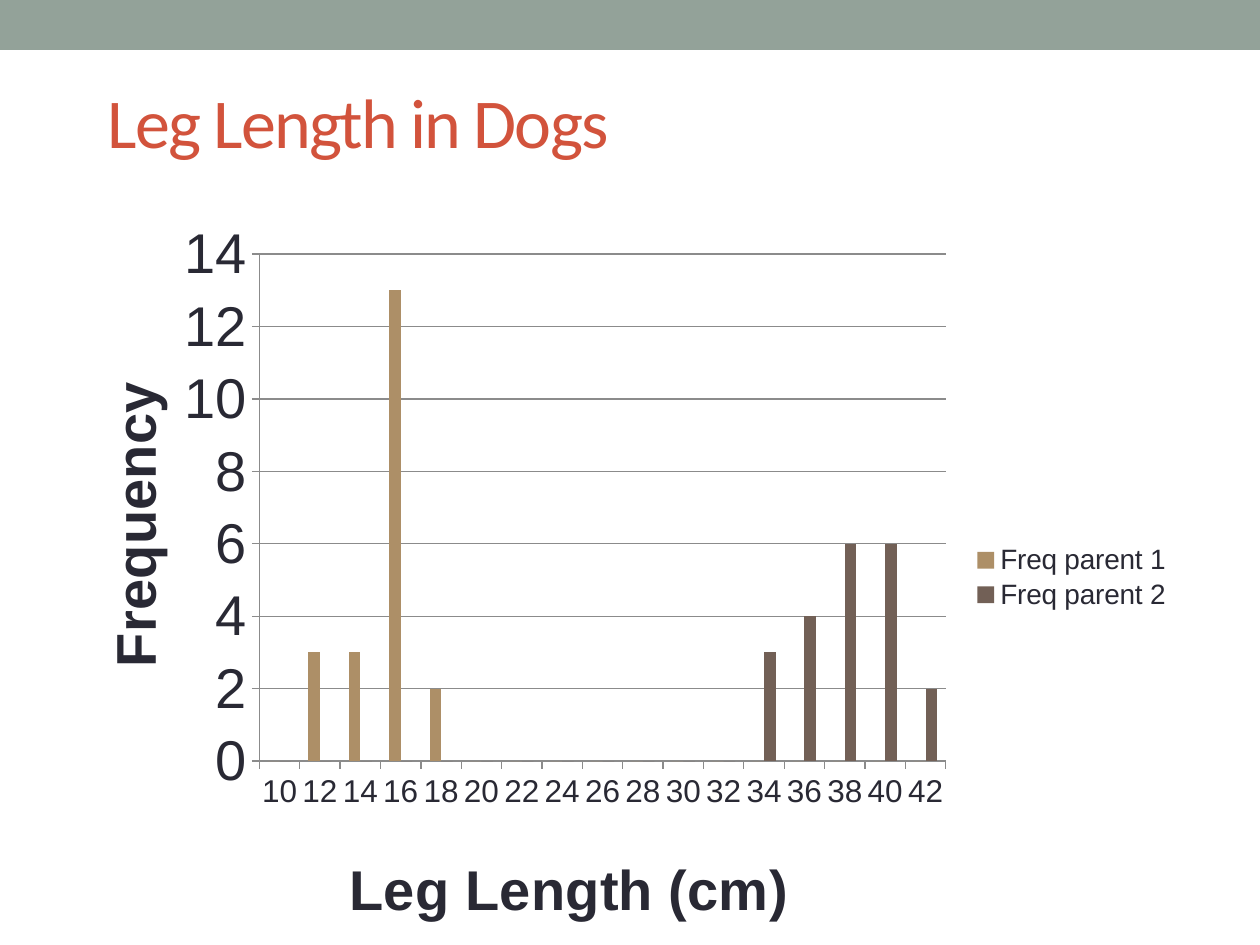
from lxml import etree
from pptx import Presentation
from pptx import util as u
from pptx.chart.data import CategoryChartData
from pptx.dml.color import RGBColor
from pptx.enum import chart as ch, shapes, text
from pptx.oxml.ns import qn

PX = 914400 / 126
INK, GRID = "292934", "8B8B8B"
LENGTHS = range(10, 43, 2)
PARENTS = [
    ("Freq parent 1", "AD8F67", {12: 3, 14: 3, 16: 13, 18: 2}),
    ("Freq parent 2", "726056", {34: 3, 36: 4, 38: 6, 40: 6, 42: 2}),
]


def px(*lengths):
    """Turn pixel lengths into EMU."""
    return [u.Emu(round(length * PX)) for length in lengths]


def rgb(value):
    """Turn a hex string into a colour."""
    return RGBColor.from_string(value)


def style(font, size, name="Arial", colour=INK, bold=False):
    """Set the size, face, colour and weight of a font."""
    font.size, font.name, font.bold = u.Pt(size), name, bold
    font.color.rgb = rgb(colour)


def add_band(slide):
    """Draw the band along the top edge."""
    band = slide.shapes.add_shape(shapes.MSO_SHAPE.RECTANGLE, *px(0, 0, 1260, 50))
    band.shadow.inherit = False
    band.fill.solid()
    band.fill.fore_color.rgb = rgb("93A299")
    band.line.fill.background()


def add_title(slide, wording):
    """Fill and place the title placeholder."""
    title = slide.shapes.title
    title.left, title.top, title.width, title.height = px(95, 53, 1102, 136)
    frame = title.text_frame
    frame.vertical_anchor = text.MSO_ANCHOR.MIDDLE
    frame.paragraphs[0].alignment = text.PP_ALIGN.LEFT
    run = frame.paragraphs[0].add_run()
    run.text = wording
    style(run.font, 40, "Calibri", "D2533C")
    run.font._element.set("spc", "-100")


def place(part, index, inner=False, **fractions):
    """Give a chart part a manual layout in fractions of the chart."""
    for old in part.findall(qn("c:layout")):
        part.remove(old)
    layout = etree.Element(qn("c:layout"))
    manual = etree.SubElement(layout, qn("c:manualLayout"))
    if inner:
        etree.SubElement(manual, qn("c:layoutTarget")).set("val", "inner")
    for side in "xy":
        etree.SubElement(manual, qn(f"c:{side}Mode")).set("val", "edge")
    for side, fraction in fractions.items():
        etree.SubElement(manual, qn(f"c:{side}")).set("val", str(fraction))
    part.insert(index, layout)


def format_axis(axis, wording, size, x, y):
    """Format an axis and place its title."""
    style(axis.tick_labels.font, size)
    axis.major_tick_mark = ch.XL_TICK_MARK.OUTSIDE
    axis.minor_tick_mark = ch.XL_TICK_MARK.NONE
    axis.format.line.color.rgb = rgb(GRID)
    run = axis.axis_title.text_frame.paragraphs[0].add_run()
    run.text = wording
    style(run.font, 32, bold=True)
    place(axis.axis_title._element, 1, x=x, y=y)


def add_histogram(slide):
    """Add the column chart of leg lengths for both parents."""
    data = CategoryChartData()
    data.categories = [str(length) for length in LENGTHS]
    for name, _, counts in PARENTS:
        data.add_series(name, [counts.get(length, 0) for length in LENGTHS])
    chart = slide.shapes.add_chart(
        ch.XL_CHART_TYPE.COLUMN_CLUSTERED, *px(42, 210, 1144, 735), data).chart
    style(chart.font, 32)
    chart.has_title = False

    columns = chart.plots[0]
    columns.gap_width, columns.overlap, columns.vary_by_categories = 150, 0, False
    for parent, (_, colour, _) in zip(columns.series, PARENTS):
        parent.format.fill.solid()
        parent.format.fill.fore_color.rgb = rgb(colour)

    format_axis(chart.category_axis, "Leg Length (cm)", 18, 0.26, 0.86)
    frequency = chart.value_axis
    format_axis(frequency, "Frequency", 32, 0.04, 0.22)
    frequency.minimum_scale, frequency.maximum_scale, frequency.major_unit = 0, 14, 2
    frequency.has_major_gridlines = True
    frequency.major_gridlines.format.line.color.rgb = rgb(GRID)

    chart.has_legend = True
    legend = chart.legend
    legend.position = ch.XL_LEGEND_POSITION.RIGHT
    legend.include_in_layout = False
    style(legend.font, 16)
    place(legend._element, 1, x=0.81, y=0.45, w=0.18, h=0.1)
    plot_area = chart._chartSpace.chart.plotArea
    place(plot_area, 0, inner=True, x=0.19, y=0.06, w=0.6, h=0.69)


def main():
    """Build and save the slide."""
    deck = Presentation()
    deck.slide_width, deck.slide_height = px(1260, 945)
    slide = deck.slides.add_slide(deck.slide_layouts[5])
    add_band(slide)
    add_histogram(slide)
    add_title(slide, "Leg Length in Dogs")
    deck.save("out.pptx")


if __name__ == "__main__":
    main()
